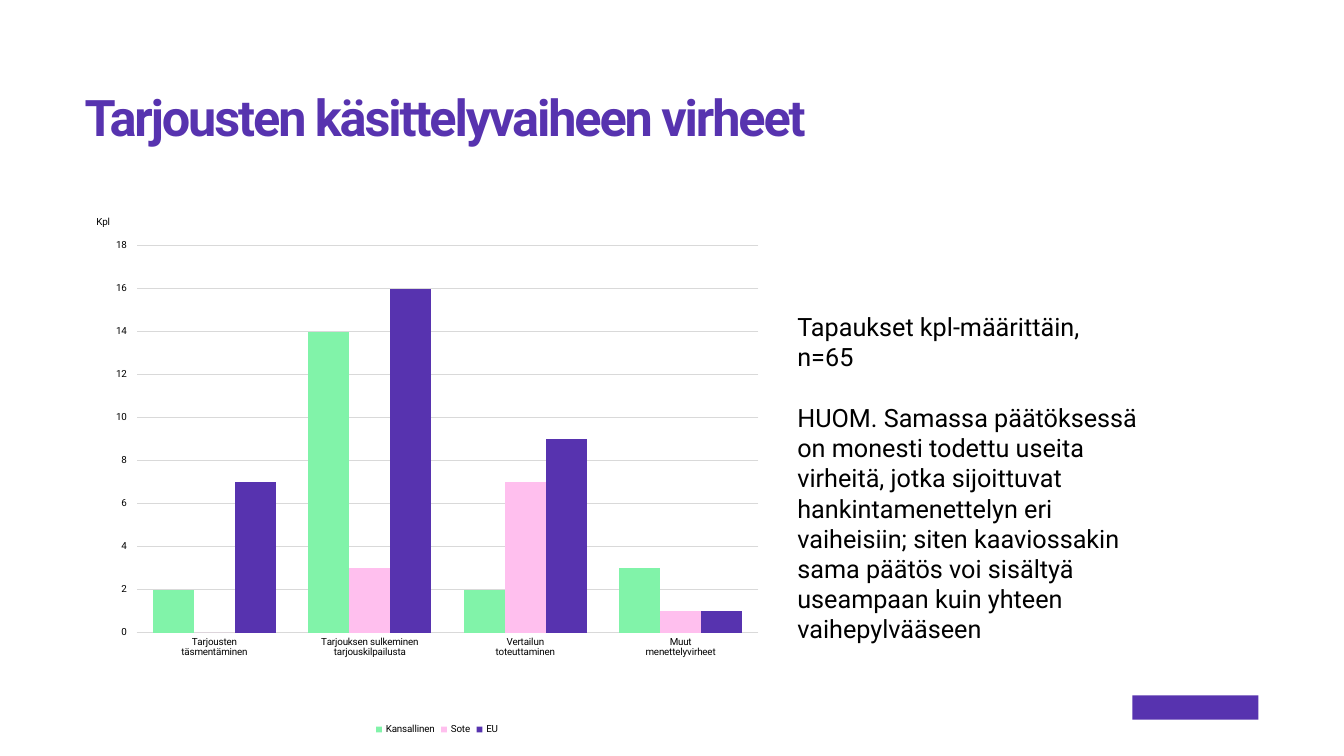
from lxml import etree
from pptx import Presentation
from pptx import util as u
from pptx.chart.data import CategoryChartData
from pptx.dml.color import RGBColor
from pptx.enum import chart as ch, shapes, text
from pptx.oxml.ns import qn

COLORS = {"purple": "5733AF", "green": "81F3A9", "pink": "FFBFEE",
          "grid": "D9D9D9", "black": "000000"}
FONT = "Roboto"
HEADING = "Tarjousten käsittelyvaiheen virheet"
UNIT = "Kpl"
PHASES = ["Tarjousten\ntäsmentäminen", "Tarjouksen sulkeminen tarjouskilpailusta",
          "Vertailun\ntoteuttaminen", "Muut\nmenettelyvirheet"]
ERRORS = [("Kansallinen", (2, 14, 2, 3), "green"),
          ("Sote", (0, 3, 7, 1), "pink"),
          ("EU", (7, 16, 9, 1), "purple")]
SAMPLE = ["Tapaukset kpl-määrittäin,", "n=65"]
REMARK = ["HUOM. Samassa päätöksessä", "on monesti todettu useita",
          "virheitä, jotka sijoittuvat", "hankintamenettelyn eri",
          "vaiheisiin; siten kaaviossakin", "sama päätös voi sisältyä",
          "useampaan kuin yhteen", "vaihepylvääseen"]
PLACES = {"heading": (0.84, 0.92, 11.66, 0.63), "chart": (0.87, 2.07, 6.93, 5.26),
          "notes": (7.81, 3.04, 5.08, 3.54), "emblem": (11.23, 6.9, 1.25, 0.24)}
PLOT = {"layoutTarget": "inner", "xMode": "edge", "yMode": "edge",
        "x": 0.07, "y": 0.07, "w": 0.89, "h": 0.73}
UNIT_PLACE = {"xMode": "edge", "yMode": "edge", "x": 0.01, "y": 0.01}


def rgb(name):
    return RGBColor.from_string(COLORS[name])


def place(name):
    return [u.Inches(length) for length in PLACES[name]]


def apply(target, formats):
    for key, value in formats.items():
        setattr(target, key, value)


def style(font, size, color="black", bold=False):
    apply(font, {"name": FONT, "size": u.Pt(size), "bold": bold})
    font.color.rgb = rgb(color)


def set_layout(parent, values):
    layout = parent.find(qn("c:layout"))
    if layout is None:
        layout = etree.Element(qn("c:layout"))
        parent.insert(0, layout)
    manual = etree.SubElement(layout, qn("c:manualLayout"))
    for key, value in values.items():
        etree.SubElement(manual, qn("c:" + key)).set("val", str(value))


def add_heading(slide):
    heading = slide.shapes.add_textbox(*place("heading"))
    frame = heading.text_frame
    apply(frame, {"word_wrap": True, "margin_left": 0, "margin_right": 0,
                  "margin_top": 0, "margin_bottom": 0,
                  "vertical_anchor": text.MSO_ANCHOR.TOP})
    line = frame.paragraphs[0]
    line.line_spacing = 0.9
    run = line.add_run()
    run.text = HEADING
    style(run.font, 36, "purple", True)
    heading.element.find(".//" + qn("a:rPr")).set("spc", "-150")


def add_error_chart(slide):
    data = CategoryChartData()
    data.categories = PHASES
    for name, counts, _ in ERRORS:
        data.add_series(name, counts)
    chart = slide.shapes.add_chart(
        ch.XL_CHART_TYPE.COLUMN_CLUSTERED, *place("chart"), data).chart
    style(chart.font, 7)
    apply(chart, {"has_title": False, "has_legend": True})
    apply(chart.legend, {"position": ch.XL_LEGEND_POSITION.BOTTOM,
                         "include_in_layout": False})
    style(chart.legend.font, 7)
    bars = chart.plots[0]
    apply(bars, {"gap_width": 80, "overlap": 0, "vary_by_categories": False})
    for series, (_, _, color) in zip(bars.series, ERRORS):
        series.format.fill.solid()
        series.format.fill.fore_color.rgb = rgb(color)
    phases, counts = chart.category_axis, chart.value_axis
    phases.major_tick_mark = ch.XL_TICK_MARK.NONE
    apply(counts, {"minimum_scale": 0, "maximum_scale": 18, "major_unit": 2,
                   "major_tick_mark": ch.XL_TICK_MARK.OUTSIDE})
    counts.format.line.fill.background()
    for line in (phases.format.line, counts.major_gridlines.format.line):
        line.color.rgb = rgb("grid")
        line.width = u.Pt(0.75)
    for axis in (phases, counts):
        style(axis.tick_labels.font, 7)
    unit = counts.axis_title
    run = unit.text_frame.paragraphs[0].add_run()
    run.text = UNIT
    style(run.font, 7)
    unit.element.find(".//" + qn("a:bodyPr")).set("rot", "0")
    set_layout(unit.element, UNIT_PLACE)
    set_layout(chart.element.find(".//" + qn("c:plotArea")), PLOT)


def add_notes(slide):
    frame = slide.shapes.add_textbox(*place("notes")).text_frame
    frame.word_wrap = True
    for i, words in enumerate(SAMPLE + REMARK):
        line = frame.add_paragraph() if i else frame.paragraphs[0]
        if i == len(SAMPLE):
            line.space_before = u.Pt(21.6)
        run = line.add_run()
        run.text = words
        style(run.font, 18)


def add_emblem(slide):
    emblem = slide.shapes.add_shape(shapes.MSO_SHAPE.RECTANGLE, *place("emblem"))
    emblem.shadow.inherit = False
    emblem.fill.solid()
    emblem.fill.fore_color.rgb = rgb("purple")
    emblem.line.fill.background()


def main():
    """Build the slide on errors in the tender handling phase."""
    deck = Presentation()
    apply(deck, {"slide_width": u.Inches(13.33), "slide_height": u.Inches(7.5)})
    slide = deck.slides.add_slide(deck.slide_layouts[6])
    for add_part in (add_emblem, add_heading, add_error_chart, add_notes):
        add_part(slide)
    deck.save("out.pptx")


if __name__ == "__main__":
    main()
